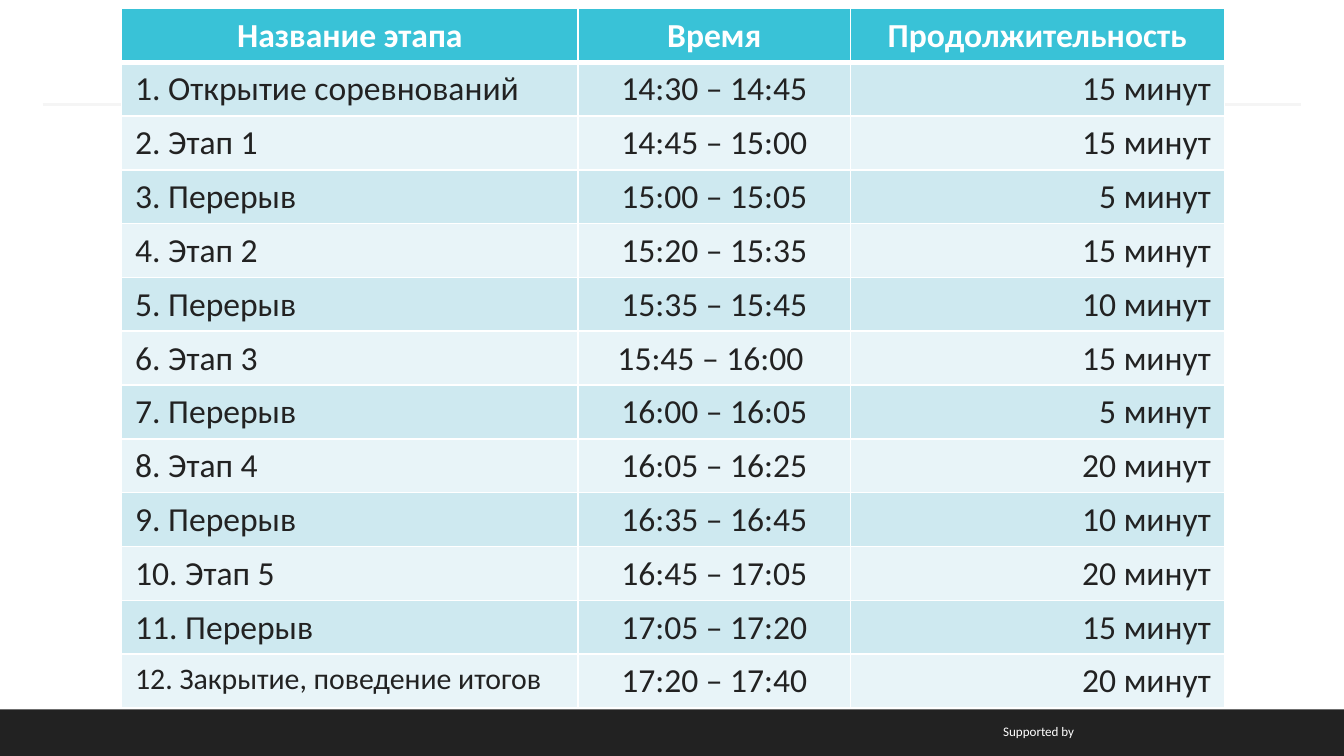
from lxml import etree
from pptx import Presentation
from pptx.dml.color import RGBColor
from pptx.enum.shapes import MSO_CONNECTOR, MSO_SHAPE
from pptx.enum.text import PP_ALIGN
from pptx.oxml.ns import qn
from pptx.util import Cm, Pt

LEFT, MID, RIGHT = PP_ALIGN.LEFT, PP_ALIGN.CENTER, PP_ALIGN.RIGHT
RECT, LINE = MSO_SHAPE.RECTANGLE, MSO_CONNECTOR.STRAIGHT

FONT = "Calibri"
HEX = {
    "white": "FFFFFF",
    "dark": "222222",
    "rule": "F5F5F5",
    "head": "39C2D7",
    "odd": "CEE9F0",
    "even": "E8F4F8",
}

HEADS = ["Название этапа", "Время", "Продолжительность"]
STAGES = [
    ("Открытие соревнований", "14:30 – 14:45", 15),
    ("Этап 1", "14:45 – 15:00", 15),
    ("Перерыв", "15:00 – 15:05", 5),
    ("Этап 2", "15:20 – 15:35", 15),
    ("Перерыв", "15:35 – 15:45", 10),
    ("Этап 3", "15:45 – 16:00 ", 15),
    ("Перерыв", "16:00 – 16:05", 5),
    ("Этап 4", "16:05 – 16:25", 20),
    ("Перерыв", "16:35 – 16:45", 10),
    ("Этап 5", "16:45 – 17:05", 20),
    ("Перерыв", "17:05 – 17:20", 15),
    ("Закрытие, поведение итогов", "17:20 – 17:40", 20),
]


def color(name):
    return RGBColor.from_string(HEX[name])


def write(frame, text, size, tint, align, bold=False):
    para = frame.paragraphs[0]
    para.alignment = align
    run = para.add_run()
    run.text = text
    font = run.font
    font.name, font.size, font.bold = FONT, Pt(size), bold
    font.color.rgb = color(tint)


def edge(cell, base):
    """Draw white cell borders, the bottom one `base` points wide."""
    props = cell._tc.get_or_add_tcPr()
    for side, width in zip("LRTB", (1, 1, 1, base)):
        line = etree.SubElement(props, qn(f"a:ln{side}"), w=str(Pt(width)))
        fill = etree.SubElement(line, qn("a:solidFill"))
        etree.SubElement(fill, qn("a:srgbClr"), val=HEX["white"])


def paint(cell, tint, base=1):
    edge(cell, base)
    cell.fill.solid()
    cell.fill.fore_color.rgb = color(tint)


def add_rule(slide, left, top, width):
    rule = slide.shapes.add_connector(
        LINE, Cm(left), Cm(top), Cm(left + width), Cm(top))
    rule.line.color.rgb = color("rule")
    rule.line.width = Pt(1.5)
    etree.SubElement(rule._element.spPr, qn("a:effectLst"))


def add_footer(slide, left, top, width, height):
    bar = slide.shapes.add_shape(
        RECT, Cm(left), Cm(top), Cm(width), Cm(height))
    bar.shadow.inherit = False
    bar.fill.solid()
    bar.fill.fore_color.rgb = color("dark")
    bar.line.fill.background()
    note = slide.shapes.add_textbox(
        Cm(left + 13.82), Cm(top + 0.14), Cm(6.73), Cm(0.56))
    note.text_frame.word_wrap = True
    write(note.text_frame, "Supported by", 7, "white", RIGHT)


def add_plan(slide, left, top, width, height):
    """Place the timetable of stages."""
    count = len(STAGES) + 1
    table = slide.shapes.add_table(
        count, len(HEADS), Cm(left), Cm(top), Cm(width), Cm(height)).table
    for col, share in zip(table.columns, (0.414, 0.247, 0.339)):
        col.width = Cm(width * share)
    for row in table.rows:
        row.height = Cm(height / count)

    for col, head in enumerate(HEADS):
        cell = table.cell(0, col)
        paint(cell, "head", 3)
        write(cell.text_frame, head, 18, "white", MID, True)

    for num, (name, time, mins) in enumerate(STAGES, 1):
        texts = (f"{num}. {name}", time, f"{mins} минут")
        sizes = (16 if num == len(STAGES) else 18, 18, 18)
        for col, align in enumerate((LEFT, MID, RIGHT)):
            cell = table.cell(num, col)
            paint(cell, "odd" if num % 2 else "even")
            write(cell.text_frame, texts[col], sizes[col], "dark", align)


def main():
    deck = Presentation()
    deck.slide_width, deck.slide_height = Cm(25.4), Cm(14.29)
    slide = deck.slides.add_slide(deck.slide_layouts[6])
    add_footer(slide, 0, 13.41, 25.4, 0.88)
    add_rule(slide, 0.81, 1.98, 23.78)
    add_plan(slide, 2.3, 0.16, 20.84, 12.55)
    deck.save("out.pptx")


if __name__ == "__main__":
    main()
